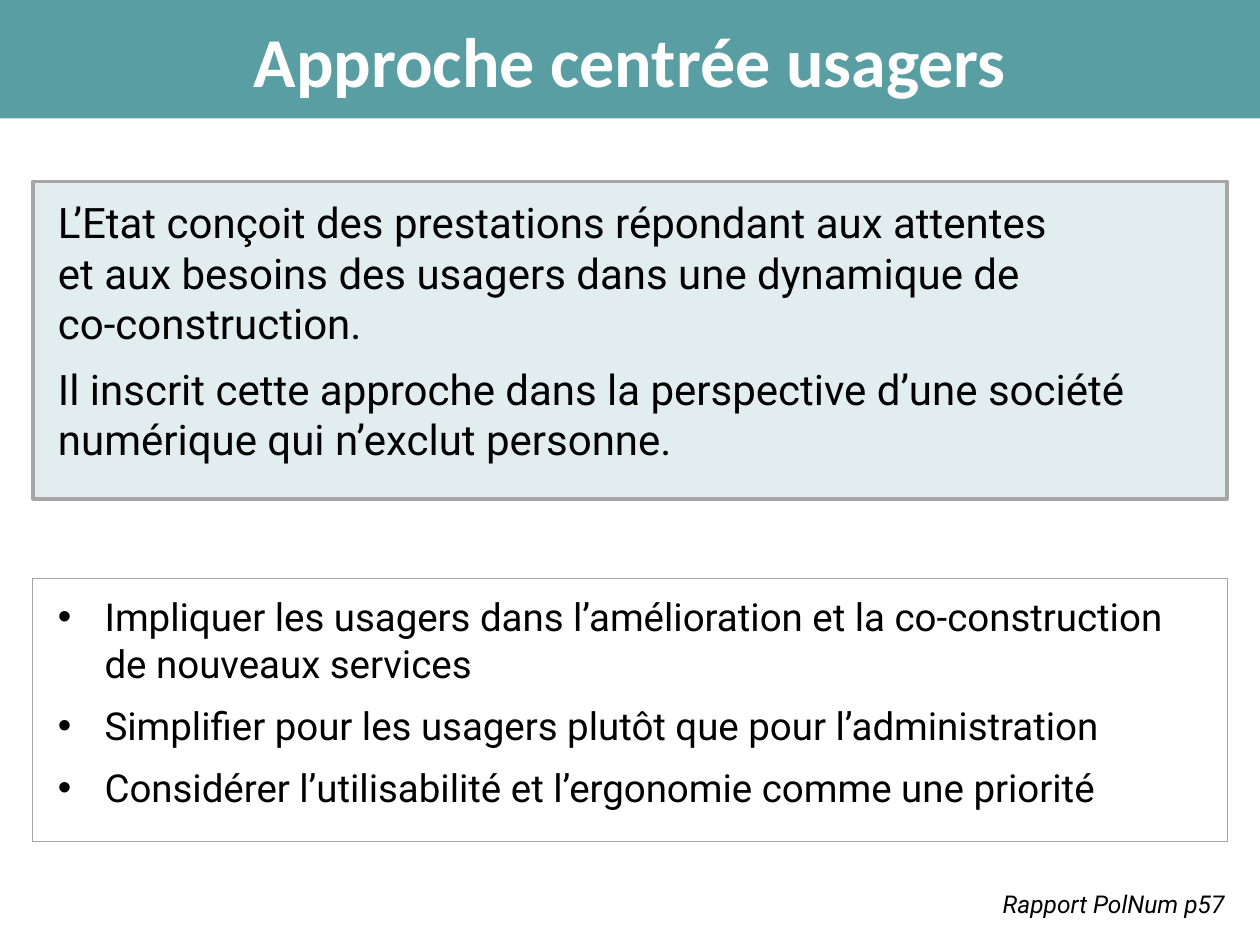
from lxml import etree
from pptx import Presentation
from pptx.dml.color import RGBColor
from pptx.enum.shapes import MSO_SHAPE
from pptx.enum.text import MSO_ANCHOR, MSO_AUTO_SIZE, PP_ALIGN
from pptx.oxml.ns import qn
from pptx.util import Inches, Pt

COLORS = {"teal": "599EA3", "grey": "A6A6A6", "black": "000000", "white": "FFFFFF"}

TITLE = "Approche centrée usagers"
PRINCIPLES = [
    "L’Etat conçoit des prestations répondant aux attentes\v"
    "et aux besoins des usagers dans une dynamique de\v"
    "co-construction.",
    "Il inscrit cette approche dans la perspective d’une société "
    "numérique qui n’exclut personne.",
]
ACTIONS = [
    "Impliquer les usagers dans l’amélioration et la co-construction "
    "de nouveaux services",
    "Simplifier pour les usagers plutôt que pour l’administration",
    "Considérer l’utilisabilité et l’ergonomie comme une priorité",
]
SOURCE = "Rapport PolNum p57"


def rgb(name):
    return RGBColor.from_string(COLORS[name])


def place(shape, left, top, width, height):
    shape.left, shape.top = Inches(left), Inches(top)
    shape.width, shape.height = Inches(width), Inches(height)


def style_font(paragraph, size, color="black", name="Roboto"):
    font = paragraph.font
    font.name, font.size = name, Pt(size)
    font.color.rgb = rgb(color)


def set_outline(shape, width):
    shape.line.color.rgb = rgb("grey")
    shape.line.width = Pt(width)


def add_bullet(paragraph, indent):
    properties = paragraph._p.get_or_add_pPr()
    properties.set("marL", str(Inches(indent)))
    properties.set("indent", str(-Inches(indent)))
    etree.SubElement(properties, qn("a:buFont"), typeface="Arial")
    etree.SubElement(properties, qn("a:buChar"), char="•")


def fill_panel(frame, texts, size, bulleted=False):
    """Write left-aligned paragraphs into a padded, top-anchored text frame."""
    frame.word_wrap = True
    frame.auto_size = MSO_AUTO_SIZE.NONE
    frame.vertical_anchor = MSO_ANCHOR.TOP
    frame.margin_left = frame.margin_right = Inches(0.2)
    frame.margin_top = frame.margin_bottom = Inches(0.12)
    for index, text in enumerate(texts):
        paragraph = frame.add_paragraph() if index else frame.paragraphs[0]
        paragraph.text = text
        if bulleted:
            add_bullet(paragraph, 0.37)
        paragraph.alignment = PP_ALIGN.LEFT
        paragraph.space_before = Pt(9 if index else 0)
        style_font(paragraph, size)


def build_title(title, box):
    place(title, *box)
    title.fill.solid()
    title.fill.fore_color.rgb = rgb("teal")
    frame = title.text_frame
    frame.text = TITLE
    frame.auto_size = MSO_AUTO_SIZE.NONE
    frame.vertical_anchor = MSO_ANCHOR.MIDDLE
    heading = frame.paragraphs[0]
    heading.alignment = PP_ALIGN.CENTER
    style_font(heading, 40, "white", "Calibri")
    heading.font.bold = True


def build_actions(body, box):
    place(body, *box)
    set_outline(body, 0.75)
    fill_panel(body.text_frame, ACTIONS, 22, bulleted=True)


def build_principles(slide, box):
    panel = slide.shapes.add_shape(MSO_SHAPE.RECTANGLE, *map(Inches, box))
    panel.shadow.inherit = False
    panel.fill.solid()
    panel.fill.fore_color.rgb = rgb("teal")
    tint = panel.fill._xPr.find(qn("a:solidFill"))[0]
    etree.SubElement(tint, qn("a:alpha"), val="18000")
    set_outline(panel, 2)
    fill_panel(panel.text_frame, PRINCIPLES, 24)


def build_source(slide, box):
    frame = slide.shapes.add_textbox(*map(Inches, box)).text_frame
    frame.word_wrap = False
    frame.auto_size = MSO_AUTO_SIZE.SHAPE_TO_FIT_TEXT
    frame.text = SOURCE
    reference = frame.paragraphs[0]
    style_font(reference, 14)
    reference.font.italic = True


def main():
    deck = Presentation()
    deck.slide_width, deck.slide_height = Inches(10), Inches(7.5)
    slide = deck.slides.add_slide(deck.slide_layouts[1])
    margin = 0.26
    panel_width = 10 - 2 * margin
    build_title(slide.shapes.title, (0, 0, 10, 0.94))
    build_actions(slide.placeholders[1], (margin, 4.59, panel_width, 2.09))
    build_principles(slide, (margin, 1.44, panel_width, 2.52))
    build_source(slide, (7.86, 7.01, 2.01, 0.34))
    deck.save("out.pptx")


if __name__ == "__main__":
    main()
